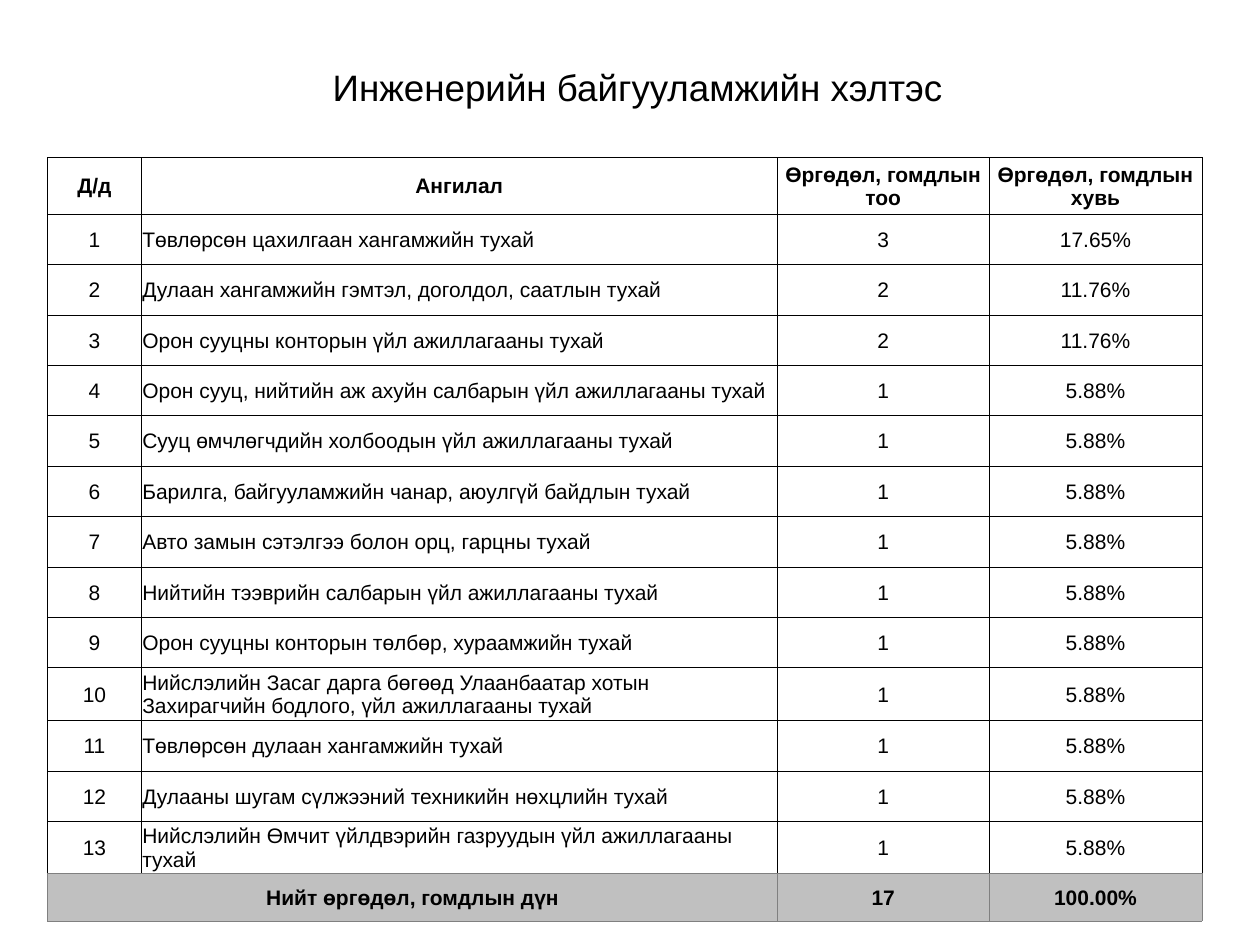
from dataclasses import dataclass

from lxml import etree
from pptx import Presentation, util as u
from pptx.dml.color import RGBColor
from pptx.enum import text
from pptx.oxml.ns import qn


@dataclass(frozen=True)
class Theme:
    font: str = "Arial"
    ink: str = "000000"
    paper: str = "FFFFFF"
    total: str = "C0C0C0"
    rule: str = "808080"
    line: float = 0.5
    head: int = 21
    body: int = 12


HEADS = ["Д/д", "Ангилал", "Өргөдөл, гомдлын тоо", "Өргөдөл, гомдлын хувь"]
TOPICS = [
    ("Төвлөрсөн цахилгаан хангамжийн тухай", 3),
    ("Дулаан хангамжийн гэмтэл, доголдол, саатлын тухай", 2),
    ("Орон сууцны конторын үйл ажиллагааны тухай", 2),
    ("Орон сууц, нийтийн аж ахуйн салбарын үйл ажиллагааны тухай", 1),
    ("Сууц өмчлөгчдийн холбоодын үйл ажиллагааны тухай", 1),
    ("Барилга, байгууламжийн чанар, аюулгүй байдлын тухай", 1),
    ("Авто замын сэтэлгээ болон орц, гарцны тухай", 1),
    ("Нийтийн тээврийн салбарын үйл ажиллагааны тухай", 1),
    ("Орон сууцны конторын төлбөр, хураамжийн тухай", 1),
    ("Нийслэлийн Засаг дарга бөгөөд Улаанбаатар хотын Захирагчийн бодлого, "
     "үйл ажиллагааны тухай", 1),
    ("Төвлөрсөн дулаан хангамжийн тухай", 1),
    ("Дулааны шугам сүлжээний техникийн нөхцлийн тухай", 1),
    ("Нийслэлийн Өмчит үйлдвэрийн газруудын үйл ажиллагааны тухай", 1),
]
COLS = [7.4, 50.5, 16.8, 16.9]
ROWS = [4.5] + [4] * 9 + [4.2, 4, 4, 3.8, 3.8]


def put(item, **vals):
    for name, val in vals.items():
        setattr(item, name, val)


class Deck:
    """Style and current slide; lengths are units of a 100 by 75 grid."""

    def __init__(self, theme):
        self.theme = theme
        self.show = Presentation()
        put(self.show, slide_width=u.Inches(10), slide_height=u.Inches(7.5))
        self.unit = self.show.slide_width / 100
        self.slide = self.show.slides.add_slide(self.show.slide_layouts[6])

    def span(self, *vals):
        return [u.Emu(round(v * self.unit)) for v in vals]

    def label(self, para, words, size, bold=False, left=False):
        align = text.PP_ALIGN.LEFT if left else text.PP_ALIGN.CENTER
        put(para, text=words, alignment=align)
        font = para.runs[0].font
        put(font, name=self.theme.font, size=u.Pt(size), bold=bold)
        font.color.rgb = RGBColor.from_string(self.theme.ink)

    def title(self, words, *box):
        frame = self.slide.shapes.add_textbox(*self.span(*box)).text_frame
        put(frame, word_wrap=True, vertical_anchor=text.MSO_ANCHOR.MIDDLE,
            margin_left=u.Inches(0.33))
        frame.paragraphs[0].line_spacing = 0.9
        self.label(frame.paragraphs[0], words, self.theme.head)

    def edge(self, cell, side, color):
        props = cell._tc.get_or_add_tcPr()
        line = etree.SubElement(props, qn("a:ln" + side),
                                w=str(u.Pt(self.theme.line)))
        fill = etree.SubElement(line, qn("a:solidFill"))
        etree.SubElement(fill, qn("a:srgbClr"), val=color)

    def table(self, data, left, top):
        t = self.theme
        box = self.span(left, top, sum(COLS), sum(ROWS))
        grid = self.slide.shapes.add_table(len(ROWS), len(COLS), *box).table
        put(grid, first_row=False, horz_banding=False)
        for col, wide in zip(grid.columns, self.span(*COLS)):
            col.width = wide
        for row, high in zip(grid.rows, self.span(*ROWS)):
            row.height = high
        last = len(data) - 1
        for r, line in enumerate(data):
            for c, words in enumerate(line):
                cell = grid.cell(r, c)
                put(cell, vertical_anchor=text.MSO_ANCHOR.MIDDLE,
                    margin_left=u.Inches(0.01), margin_right=u.Inches(0.01),
                    margin_top=u.Inches(0.01), margin_bottom=0)
                for side in "LRTB":
                    soft = r == last or (r == last - 1 and side == "B")
                    self.edge(cell, side, t.rule if soft else t.ink)
                cell.fill.solid()
                cell.fill.fore_color.rgb = RGBColor.from_string(
                    t.total if r == last else t.paper)
                if words:
                    ends = r in (0, last)
                    self.label(cell.text_frame.paragraphs[0], words, t.body,
                               bold=ends, left=c == 1 and not ends)
        grid.cell(last, 0).merge(grid.cell(last, 1))


def main():
    total = sum(count for _, count in TOPICS)
    body = [[str(n), topic, str(count), f"{count / total:.2%}"]
            for n, (topic, count) in enumerate(TOPICS, 1)]
    foot = ["Нийт өргөдөл, гомдлын дүн", "", str(total), f"{1:.2%}"]
    deck = Deck(Theme())
    deck.title("Инженерийн байгууламжийн хэлтэс", 3.3, 2.4, 92.3, 9.4)
    deck.table([HEADS, *body, foot], 3.8, 12.5)
    deck.show.save("out.pptx")


if __name__ == "__main__":
    main()
